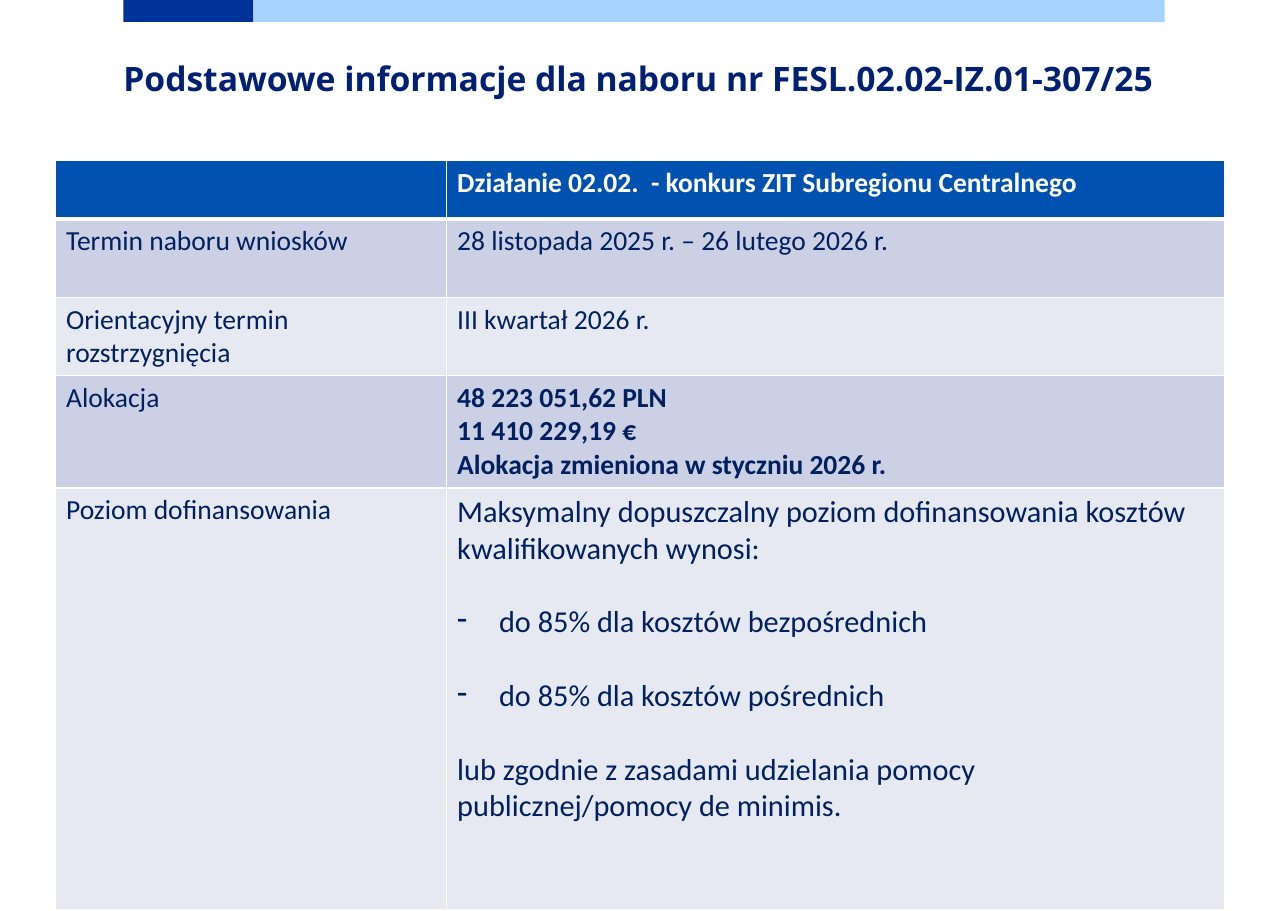
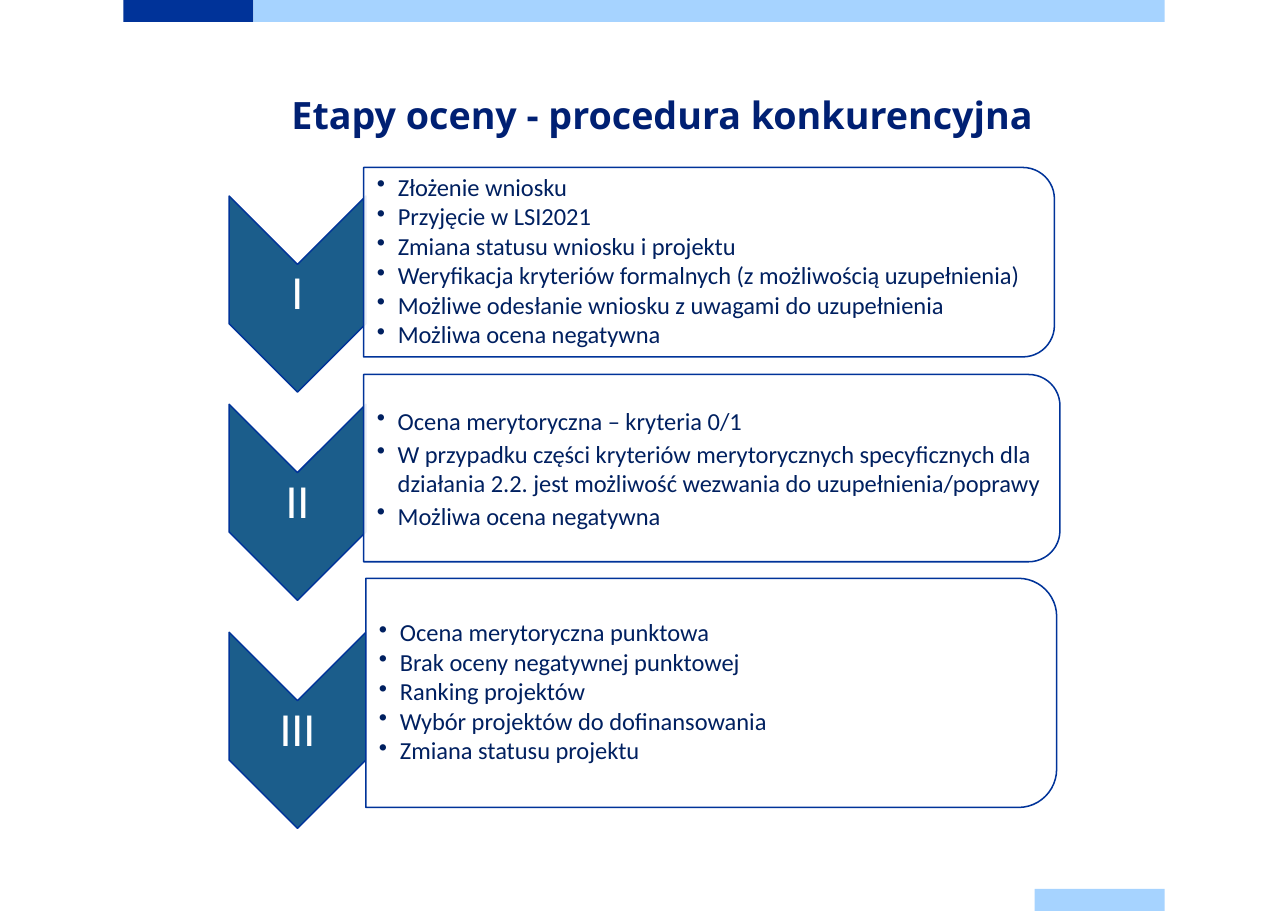
from dataclasses import dataclass

from lxml.etree import SubElement
from pptx import Presentation
from pptx.dml.color import RGBColor
from pptx.enum.shapes import MSO_SHAPE as Shape
from pptx.enum.text import MSO_ANCHOR as Anchor, PP_ALIGN as Align
from pptx.oxml.ns import qn
from pptx.util import Emu, Pt

PX = 9144


def px(n: int) -> Emu:
    return Emu(n * PX)


@dataclass(frozen=True)
class Theme:
    navy: str = "003399"
    sky: str = "A6D3FF"
    title: str = "002073"
    ink: str = "002060"
    white: str = "FFFFFF"
    header: str = "0051B0"
    band_dark: str = "CCD0E4"
    band_light: str = "E7E9F2"
    chevron: str = "1B5D8B"
    title_font: str = "Open Sans"
    body_font: str = "Calibri"
    table_size: float = 18
    detail_size: float = 19.8
    numeral_size: float = 31
    stage_size: float = 16


T = Theme()


@dataclass(frozen=True)
class Box:
    left: int
    top: int
    width: int
    height: int

    def emu(self) -> tuple[Emu, ...]:
        return px(self.left), px(self.top), px(self.width), px(self.height)

    def turned(self) -> tuple[Emu, ...]:
        shift = (self.width - self.height) * PX // 2
        return (Emu(px(self.left) + shift), Emu(px(self.top) - shift),
                px(self.height), px(self.width))


@dataclass(frozen=True)
class Style:
    size: float
    color: str = T.ink
    font: str = T.body_font
    bold: bool = False
    align: Align = Align.LEFT
    line: object = None
    after: float = 0


@dataclass(frozen=True)
class Band:
    box: Box
    color: str


@dataclass(frozen=True)
class Row:
    label: str
    lines: tuple[str, ...]
    height: int
    fill: str
    style: Style


@dataclass(frozen=True)
class Stage:
    numeral: str
    chevron_top: int
    panel: Box
    spacing: float
    steps: tuple[str, ...]


HEADER_BANDS = (
    Band(Box(112, 0, 118, 20), T.navy),
    Band(Box(230, 0, 827, 20), T.sky),
)
FOOTER_BAND = Band(Box(939, 807, 118, 20), T.sky)

PLAIN = Style(T.table_size)
STRONG = Style(T.table_size, bold=True)
HEADING = Style(T.table_size, T.white, bold=True)
DETAIL = Style(T.detail_size)
NUMERAL = Style(T.numeral_size, T.white, align=Align.CENTER, line=0.9)

TABLE_LEFT, TABLE_TOP = 50, 146
COLUMNS = (355, 707)
DASH_INDENT, BULLET_INDENT = 38, 19
DETAIL_GAP = Pt(24)

ROWS = (
    Row("", ("Działanie 02.02.  - konkurs ZIT Subregionu Centralnego",), 53, T.header, HEADING),
    Row("Termin naboru wniosków", ("28 listopada 2025 r. – 26 lutego 2026 r.",),
        71, T.band_dark, PLAIN),
    Row("Orientacyjny termin rozstrzygnięcia", ("III kwartał 2026 r.",),
        71, T.band_light, PLAIN),
    Row("Alokacja",
        ("48 223 051,62 PLN", "11 410 229,19 €", "Alokacja zmieniona w styczniu 2026 r."),
        102, T.band_dark, STRONG),
    Row("Poziom dofinansowania",
        ("Maksymalny dopuszczalny poziom dofinansowania kosztów kwalifikowanych wynosi:",
         "do 85% dla kosztów bezpośrednich",
         "do 85% dla kosztów pośrednich",
         "lub zgodnie z zasadami udzielania pomocy publicznej/pomocy de minimis."),
        383, T.band_light, DETAIL),
)

CHEVRON_LEFT, CHEVRON_WIDTH, CHEVRON_HEIGHT = 208, 124, 178
STAGES = (
    Stage("I", 178, Box(330, 152, 627, 172), 0.9, (
        "Złożenie wniosku",
        "Przyjęcie w LSI2021",
        "Zmiana statusu wniosku i projektu",
        "Weryfikacja kryteriów formalnych (z możliwością uzupełnienia)",
        "Możliwe odesłanie wniosku z uwagami do uzupełnienia",
        "Możliwa ocena negatywna")),
    Stage("II", 367, Box(330, 340, 632, 170), 1.0, (
        "Ocena merytoryczna – kryteria 0/1",
        "W przypadku części kryteriów merytorycznych specyficznych dla działania 2.2. "
        "jest możliwość wezwania do uzupełnienia/poprawy",
        "Możliwa ocena negatywna")),
    Stage("III", 574, Box(332, 525, 627, 208), 0.9, (
        "Ocena merytoryczna punktowa",
        "Brak oceny negatywnej punktowej",
        "Ranking projektów",
        "Wybór projektów do dofinansowania",
        "Zmiana statusu projektu")),
)


def rgb(color: str) -> RGBColor:
    return RGBColor.from_string(color)


def add_bullet(p, char: str, indent: int) -> None:
    props = p._p.get_or_add_pPr()
    props.set("marL", str(px(indent)))
    props.set("indent", str(-px(indent)))
    SubElement(props, qn("a:buChar"), char=char)


def write(tf, lines: tuple[str, ...], style: Style, bullet: str = "") -> None:
    tf.text = "\n".join(lines)
    for p in tf.paragraphs:
        if bullet:
            add_bullet(p, bullet, BULLET_INDENT)
        p.alignment = style.align
        p.space_after = Pt(style.after)
        if style.line:
            p.line_spacing = style.line
        for r in p.runs:
            r.font.name = style.font
            r.font.size = Pt(style.size)
            r.font.bold = style.bold
            r.font.color.rgb = rgb(style.color)


def add_text(s, box: Box, lines: tuple[str, ...], style: Style, anchor: Anchor = Anchor.TOP,
             insets: tuple[int, int] = (0, 0), bullet: str = "") -> None:
    tf = s.shapes.add_textbox(*box.emu()).text_frame
    tf.word_wrap = True
    tf.vertical_anchor = anchor
    tf.margin_left = px(insets[0])
    tf.margin_top = tf.margin_right = tf.margin_bottom = px(insets[1])
    write(tf, lines, style, bullet)


def add_title(s, box: Box, text: str, size: float, align: Align = Align.LEFT) -> None:
    add_text(s, box, (text,), Style(size, T.title, T.title_font, True, align, Pt(36)))


def add_band(s, band: Band) -> None:
    sp = s.shapes.add_shape(Shape.RECTANGLE, *band.box.emu())
    sp.shadow.inherit = False
    sp.fill.solid()
    sp.fill.fore_color.rgb = rgb(band.color)
    sp.line.fill.background()


def add_turned(s, kind: Shape, box: Box, color: str, opacity: int = 100) -> None:
    sp = s.shapes.add_shape(kind, *box.turned())
    sp.rotation = 90
    sp.shadow.inherit = False
    sp.fill.solid()
    sp.fill.fore_color.rgb = rgb(color)
    if opacity < 100:
        fill = sp.element.spPr.find(qn("a:solidFill"))
        SubElement(fill[0], qn("a:alpha"), val=str(opacity * 1000))
    sp.line.color.rgb = rgb(T.navy)
    sp.line.width = Pt(1)


def format_cell(cell, fill: str, bottom: int) -> None:
    props = cell._tc.get_or_add_tcPr()
    for side, width in (("L", 1), ("R", 1), ("T", 1), ("B", bottom)):
        ln = SubElement(props, qn(f"a:ln{side}"), w=str(Pt(width)))
        SubElement(SubElement(ln, qn("a:solidFill")), qn("a:srgbClr"), val=T.white)
    cell.fill.solid()
    cell.fill.fore_color.rgb = rgb(fill)


def add_info_table(s) -> None:
    box = Box(TABLE_LEFT, TABLE_TOP, sum(COLUMNS), sum(row.height for row in ROWS))
    table = s.shapes.add_table(len(ROWS), len(COLUMNS), *box.emu()).table
    table.horz_banding = False
    for column, width in zip(table.columns, COLUMNS):
        column.width = px(width)
    for i, row in enumerate(ROWS):
        table.rows[i].height = px(row.height)
        label, value = table.cell(i, 0), table.cell(i, 1)
        for cell in (label, value):
            format_cell(cell, row.fill, 1 if i else 3)
        write(label.text_frame, (row.label,), PLAIN)
        write(value.text_frame, row.lines, row.style)
    details = value.text_frame.paragraphs
    for p in details[1:3]:
        add_bullet(p, "-", DASH_INDENT)
    for p in details[1:]:
        p.space_before = DETAIL_GAP


def add_stage(s, stage: Stage) -> None:
    chevron = Box(CHEVRON_LEFT, stage.chevron_top, CHEVRON_WIDTH, CHEVRON_HEIGHT)
    add_turned(s, Shape.CHEVRON, chevron, T.chevron)
    numeral = Box(chevron.left, chevron.top + 63, chevron.width, 53)
    add_text(s, numeral, (stage.numeral,), NUMERAL, Anchor.MIDDLE, (2, 2))
    panel = stage.panel
    add_turned(s, Shape.ROUND_2_SAME_RECTANGLE, panel, T.white, 90)
    corner = panel.height // 20
    inner = Box(panel.left, panel.top + corner, panel.width - corner, panel.height - 2 * corner)
    add_text(s, inner, stage.steps, Style(T.stage_size, line=stage.spacing, after=2),
             Anchor.MIDDLE, (12, 1), "•")


def add_slide(prs, bands: tuple[Band, ...]):
    s = prs.slides.add_slide(prs.slide_layouts[6])
    for band in bands:
        add_band(s, band)
    return s


def main() -> None:
    prs = Presentation()
    prs.slide_width, prs.slide_height = px(1169), px(827)

    s = add_slide(prs, HEADER_BANDS)
    add_title(s, Box(112, 39, 1005, 89),
              "Podstawowe informacje dla naboru nr FESL.02.02-IZ.01-307/25", 22)
    add_info_table(s)

    s = add_slide(prs, (*HEADER_BANDS, FOOTER_BAND))
    add_title(s, Box(225, 74, 752, 60), "Etapy oceny - procedura konkurencyjna", 24.6,
              Align.CENTER)
    for stage in STAGES:
        add_stage(s, stage)

    prs.save("out.pptx")


if __name__ == "__main__":
    main()
